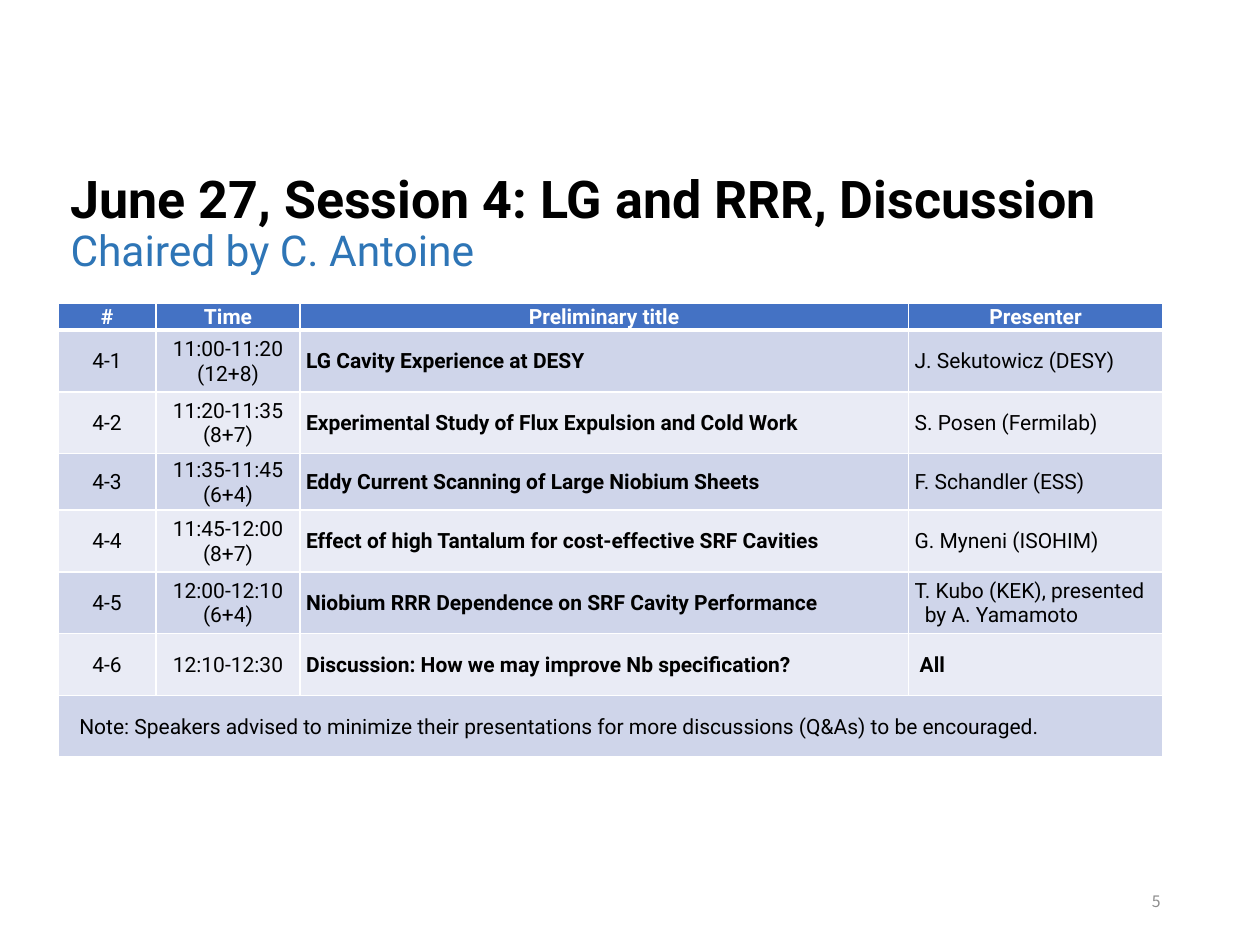
from lxml.etree import SubElement
from pptx import Presentation
from pptx.dml.color import RGBColor
from pptx.enum.text import MSO_ANCHOR, MSO_AUTO_SIZE, PP_ALIGN
from pptx.oxml.ns import qn
from pptx.util import Inches, Pt

COLORS = {
    "black": "000000",
    "white": "FFFFFF",
    "chair": "2E75B6",
    "header": "4472C4",
    "odd": "CFD5EA",
    "even": "E9EBF5",
    "number": "8C8C8C",
}
COLUMN_WIDTHS = [0.78, 1.14, 4.83, 2.02]
ROW_HEIGHTS = [0.21, 0.49, 0.49, 0.45, 0.49, 0.49, 0.49, 0.49]
HEADINGS = ["#", "Time", "Preliminary title", "Presenter"]
TALKS = [
    ("11:00-11:20\n(12+8)", "LG Cavity Experience at DESY", "J. Sekutowicz (DESY)"),
    ("11:20-11:35 (8+7)", "Experimental Study of Flux Expulsion and Cold Work", "S. Posen (Fermilab)"),
    ("11:35-11:45\n(6+4)", "Eddy Current Scanning of Large Niobium Sheets", "F. Schandler (ESS)"),
    ("11:45-12:00\n(8+7)", "Effect of high Tantalum for cost-effective SRF Cavities", "G. Myneni (ISOHIM)"),
    ("12:00-12:10\n(6+4)", "Niobium RRR Dependence on SRF Cavity Performance", "T. Kubo (KEK), presented\nby A. Yamamoto"),
    ("12:10-12:30", "Discussion: How we may improve Nb specification?", "All"),
]
NOTE = "Note: Speakers advised to minimize their presentations for more discussions (Q&As) to be encouraged."


def write_text(para, text, size=12, font="Roboto", color="black", bold=False, align=PP_ALIGN.LEFT):
    para.alignment = align
    span = para.add_run()
    span.text = text
    span.font.size = Pt(size)
    span.font.name = font
    span.font.bold = bold
    span.font.color.rgb = RGBColor.from_string(COLORS[color])


def add_title(page):
    title = page.shapes.title
    title.left, title.top, title.width, title.height = map(Inches, (0.46, 1.31, 9.17, 0.95))
    frame = title.text_frame
    frame.auto_size = MSO_AUTO_SIZE.NONE
    frame.vertical_anchor = MSO_ANCHOR.MIDDLE
    heading, chair = frame.paragraphs[0], frame.add_paragraph()
    for para in (heading, chair):
        para.line_spacing = 0.9
        para.space_before = Pt(0)
    write_text(heading, "June 27, Session 4: LG and RRR, Discussion", size=29.7, bold=True)
    write_text(chair, "Chaired by C. Antoine", size=24.3, color="chair")


def set_borders(cell, bottom_width=1):
    properties = cell._tc.get_or_add_tcPr()
    for side, width in (("L", 1), ("R", 1), ("T", 1), ("B", bottom_width)):
        line = SubElement(properties, qn(f"a:ln{side}"), w=str(Pt(width)))
        fill = SubElement(line, qn("a:solidFill"))
        SubElement(fill, qn("a:srgbClr"), val=COLORS["white"])


def style_cell(cell, fill, bottom_width=1):
    set_borders(cell, bottom_width)
    cell.fill.solid()
    cell.fill.fore_color.rgb = RGBColor.from_string(COLORS[fill])
    cell.vertical_anchor = MSO_ANCHOR.MIDDLE
    cell.margin_left = cell.margin_right = cell.margin_top = Inches(0.01)
    cell.margin_bottom = 0


def fill_cell(cell, text, indent=0.01, hanging=0, **text_format):
    cell.margin_left = Inches(indent)
    for index, line in enumerate(text.split("\n")):
        para = cell.text_frame.add_paragraph() if index else cell.text_frame.paragraphs[0]
        write_text(para, line, **text_format)
        if index and hanging:
            para._p.get_or_add_pPr().set("marL", str(Inches(hanging)))


def add_schedule(page):
    frame = page.shapes.add_table(
        len(ROW_HEIGHTS), len(COLUMN_WIDTHS), Inches(0.46), Inches(2.41),
        Inches(sum(COLUMN_WIDTHS)), Inches(sum(ROW_HEIGHTS)),
    )
    table = frame.table
    for column, width in zip(table.columns, COLUMN_WIDTHS):
        column.width = Inches(width)
    for index, (row, height) in enumerate(zip(table.rows, ROW_HEIGHTS)):
        row.height = Inches(height)
        fill = ("odd" if index % 2 else "even") if index else "header"
        for cell in row.cells:
            style_cell(cell, fill, bottom_width=1 if index else 3)

    for column, heading in enumerate(HEADINGS):
        fill_cell(table.cell(0, column), heading, color="white", bold=True, align=PP_ALIGN.CENTER)
    for row, (time, topic, presenter) in enumerate(TALKS, start=1):
        everyone = presenter == "All"
        fill_cell(table.cell(row, 0), f"4-{row}", align=PP_ALIGN.CENTER)
        fill_cell(table.cell(row, 1), time, align=PP_ALIGN.CENTER)
        fill_cell(table.cell(row, 2), topic, indent=0.05, bold=True)
        fill_cell(table.cell(row, 3), presenter, indent=0.09 if everyone else 0.05,
                  hanging=0.08, bold=everyone)

    last = len(ROW_HEIGHTS) - 1
    note = table.cell(last, 0)
    note.merge(table.cell(last, len(COLUMN_WIDTHS) - 1))
    fill_cell(note, NOTE, indent=0.17)


def add_page_number(page):
    box = page.shapes.add_textbox(Inches(7.06), Inches(6.95), Inches(2.25), Inches(0.4))
    frame = box.text_frame
    frame.word_wrap = True
    frame.vertical_anchor = MSO_ANCHOR.MIDDLE
    write_text(frame.paragraphs[0], "5", size=9, font="Noto Sans CJK JP",
               color="number", align=PP_ALIGN.RIGHT)


def main():
    deck = Presentation()
    deck.slide_width, deck.slide_height = Inches(10), Inches(7.5)
    page = deck.slides.add_slide(deck.slide_layouts[5])
    add_title(page)
    add_schedule(page)
    add_page_number(page)
    deck.save("out.pptx")


if __name__ == "__main__":
    main()
